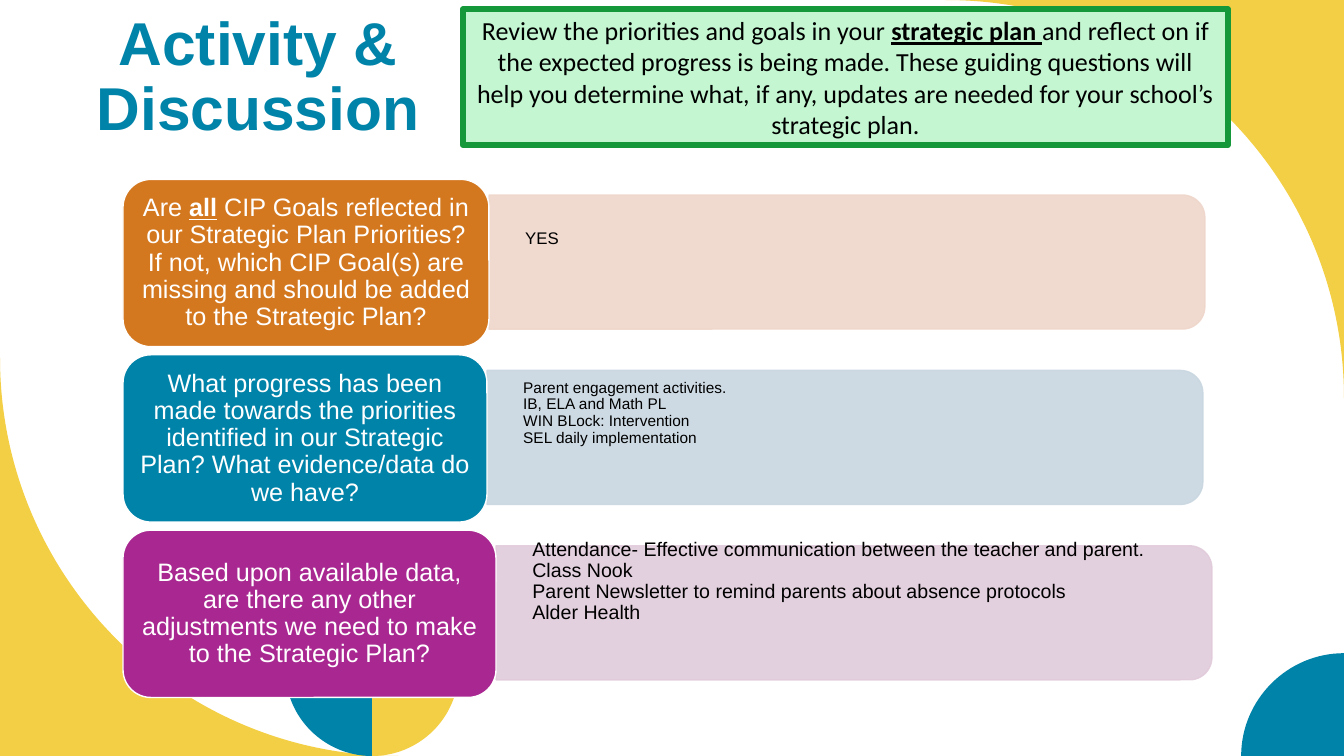
import dataclasses

import lxml.etree
import pptx
import pptx.dml.color
import pptx.enum.shapes
import pptx.enum.text
import pptx.oxml.ns
import pptx.util

SCALE = 9144  # EMU per px, 100 px to the inch
SLIDE_WIDTH, SLIDE_HEIGHT = 1333, 750
COLORS = {
    "yellow": "F3CF45",
    "blue": "0083A9",
    "orange": "D4781F",
    "purple": "A92791",
    "pale_orange": "EFD6CB",
    "pale_blue": "C9D7E1",
    "pale_purple": "E1CBDB",
    "green": "159839",
    "pale_green": "C3F6D1",
    "white": "FFFFFF",
    "black": "000000",
}
ROW_TOP, ROW_PITCH, ROW_LEFT = 178, 174, 122
QUESTION_HEIGHT = 166
BAR_WIDTH, BAR_HEIGHT = 710, 133
CORNER = 0.167

Point = tuple[int, int]
Shapes = pptx.enum.shapes.MSO_SHAPE
Anchor = pptx.enum.text.MSO_ANCHOR
Align = pptx.enum.text.PP_ALIGN


@dataclasses.dataclass(frozen=True)
class Span:
    text: str
    emphasis: bool = False


@dataclasses.dataclass(frozen=True)
class Decoration:
    """A closed outline; a step of one point is a line, of three points a curve."""
    color: str
    start: Point
    steps: tuple[tuple[Point, ...], ...]


@dataclasses.dataclass(frozen=True)
class Row:
    question: tuple[Span, ...]
    answer: str
    color: str
    pale: str
    question_width: int
    answer_size: int
    answer_offset: int


def petal(color: str, middle: int, side: int) -> Decoration:
    """Half of the flower, spreading to the right (side 1) or the left (side -1)."""
    def at(reach: int, y: int) -> Point:
        return middle + side * reach, y

    return Decoration(color, at(86, 611), (
        (at(86, 664),),
        (at(86, 712), at(47, 750), at(0, 750)),
        (at(0, 697),),
        (at(0, 653), at(34, 616), at(77, 612)),
    ))


DECORATIONS = (
    Decoration("yellow", (1333, 0), (((1333, 395),), ((1333, 177), (1157, 0), (938, 0)))),
    Decoration("yellow", (0, 355), (((0, 573), (177, 750), (395, 750)), ((0, 750),))),
    Decoration("blue", (1333, 750), (((1333, 648),), ((1277, 648), (1231, 694), (1231, 750)))),
    petal("yellow", 369, 1),
    petal("blue", 369, -1),
)

ROWS = (
    Row((Span("Are "), Span("all", True),
         Span(" CIP Goals reflected in our Strategic Plan Priorities? If not, which CIP "
              "Goal(s) are missing and should be added to the Strategic Plan?")),
        "YES", "orange", "pale_orange", 363, 12, 50),
    Row((Span("What progress has been made towards the priorities identified in our "
              "Strategic Plan? What evidence/data do we have?"),),
        "Parent engagement activities.\nIB, ELA and Math PL\n"
        "WIN BLock: Intervention\nSEL daily implementation",
        "blue", "pale_blue", 361, 11, 25),
    Row((Span("Based upon available data, are there any other adjustments we need to make "
              "to the Strategic Plan?"),),
        "Attendance- Effective communication between the teacher and parent.\nClass Nook\n"
        "Parent Newsletter to remind parents about absence protocols\nAlder Health",
        "purple", "pale_purple", 370, 14, 9),
)

INSTRUCTIONS = (
    Span("Review the priorities and goals in your "),
    Span("strategic plan ", True),
    Span("and reflect on if the expected progress is being made. These guiding questions "
         "will help you determine what, if any, updates are needed for your school’s "
         "strategic plan."),
)


def px(length: float) -> pptx.util.Emu:
    return pptx.util.Emu(round(length * SCALE))


def rgb(name: str) -> pptx.dml.color.RGBColor:
    return pptx.dml.color.RGBColor.from_string(COLORS[name])


def paint(shape, fill: str, line: str | None = None, line_width: float = 1) -> None:
    shape.shadow.inherit = False
    shape.fill.solid()
    shape.fill.fore_color.rgb = rgb(fill)
    if line is None:
        shape.line.fill.background()
    else:
        shape.line.color.rgb = rgb(line)
        shape.line.width = pptx.util.Pt(line_width)


def set_opacity(shape, percent: int) -> None:
    """Apply one opacity to both the fill and the line."""
    for color in shape.fill._xPr.iter(pptx.oxml.ns.qn("a:srgbClr")):
        lxml.etree.SubElement(color, pptx.oxml.ns.qn("a:alpha"), val=str(percent * 1000))


def set_frame(frame, anchor, horizontal: int, vertical: int) -> None:
    frame.word_wrap = True
    frame.auto_size = pptx.enum.text.MSO_AUTO_SIZE.NONE
    frame.vertical_anchor = anchor
    frame.margin_left = frame.margin_right = px(horizontal)
    frame.margin_top = frame.margin_bottom = px(vertical)


def format_text(frame, font: str, size: float, color: str, align, spacing: float) -> None:
    for paragraph in frame.paragraphs:
        paragraph.alignment = align
        paragraph.line_spacing = spacing
        for run in paragraph.runs:
            run.font.name = font
            run.font.size = pptx.util.Pt(size)
            run.font.color.rgb = rgb(color)


def write_spans(frame, spans: tuple[Span, ...]) -> None:
    for span in spans:
        run = frame.paragraphs[0].add_run()
        run.text = span.text
        run.font.bold = run.font.underline = span.emphasis


def draw_decoration(slide, decoration: Decoration) -> None:
    builder = slide.shapes.build_freeform(*decoration.start, scale=SCALE)
    builder.add_line_segments([point for step in decoration.steps for point in step])
    shape = builder.convert_to_shape()
    segments = iter(list(shape._element.iter(pptx.oxml.ns.qn("a:lnTo"))))
    for step in decoration.steps:
        first, *others = [next(segments) for _ in step]
        if others:
            first.tag = pptx.oxml.ns.qn("a:cubicBezTo")
            for segment in others:
                first.append(segment[0])
                segment.getparent().remove(segment)
    paint(shape, decoration.color)


def draw_title(slide) -> None:
    title = slide.shapes.title
    title.left, title.top, title.width, title.height = px(58), px(10), px(396), px(135)
    title.text_frame.text = "Activity & Discussion"
    set_frame(title.text_frame, Anchor.MIDDLE, 10, 5)
    format_text(title.text_frame, "Arial", 43.2, "blue", Align.CENTER, 0.9)
    title.text_frame.paragraphs[0].runs[0].font.bold = True


def draw_instructions(slide) -> None:
    panel = slide.shapes.add_shape(Shapes.RECTANGLE, px(459), px(9), px(759), px(135))
    paint(panel, "pale_green", "green", 4)
    set_frame(panel.text_frame, Anchor.MIDDLE, 10, 5)
    write_spans(panel.text_frame, INSTRUCTIONS)
    format_text(panel.text_frame, "Calibri", 18.6, "black", Align.CENTER, 1.0)


def draw_row(slide, row: Row, top: int) -> None:
    answer_left = ROW_LEFT + row.question_width
    middle_x, middle_y = answer_left + BAR_WIDTH / 2, top + QUESTION_HEIGHT / 2 - 1
    bar = slide.shapes.add_shape(
        Shapes.ROUND_2_SAME_RECTANGLE, px(middle_x - BAR_HEIGHT / 2),
        px(middle_y - BAR_WIDTH / 2), px(BAR_HEIGHT), px(BAR_WIDTH))
    bar.rotation = 90
    bar.adjustments[0], bar.adjustments[1] = CORNER, 0
    paint(bar, row.pale, row.pale)
    set_opacity(bar, 90)

    answer = slide.shapes.add_textbox(
        px(answer_left), px(top + row.answer_offset), px(704), px(110))
    answer.text_frame.text = row.answer
    set_frame(answer.text_frame, Anchor.TOP, 36, 0)
    format_text(answer.text_frame, "Arial", row.answer_size, "black", Align.LEFT, 0.9)

    question = slide.shapes.add_shape(
        Shapes.ROUNDED_RECTANGLE, px(ROW_LEFT), px(top), px(row.question_width),
        px(QUESTION_HEIGHT))
    question.adjustments[0] = CORNER
    paint(question, row.color, "white")
    set_frame(question.text_frame, Anchor.MIDDLE, 8, 4)
    write_spans(question.text_frame, row.question)
    format_text(question.text_frame, "Arial", 18, "white", Align.CENTER, 0.9)


def main() -> None:
    deck = pptx.Presentation()
    deck.slide_width, deck.slide_height = px(SLIDE_WIDTH), px(SLIDE_HEIGHT)
    slide = deck.slides.add_slide(deck.slide_layouts.get_by_name("Title Only"))
    for decoration in DECORATIONS:
        draw_decoration(slide, decoration)
    draw_instructions(slide)
    draw_title(slide)
    for index, row in enumerate(ROWS):
        draw_row(slide, row, ROW_TOP + index * ROW_PITCH)
    deck.save("out.pptx")


if __name__ == "__main__":
    main()
